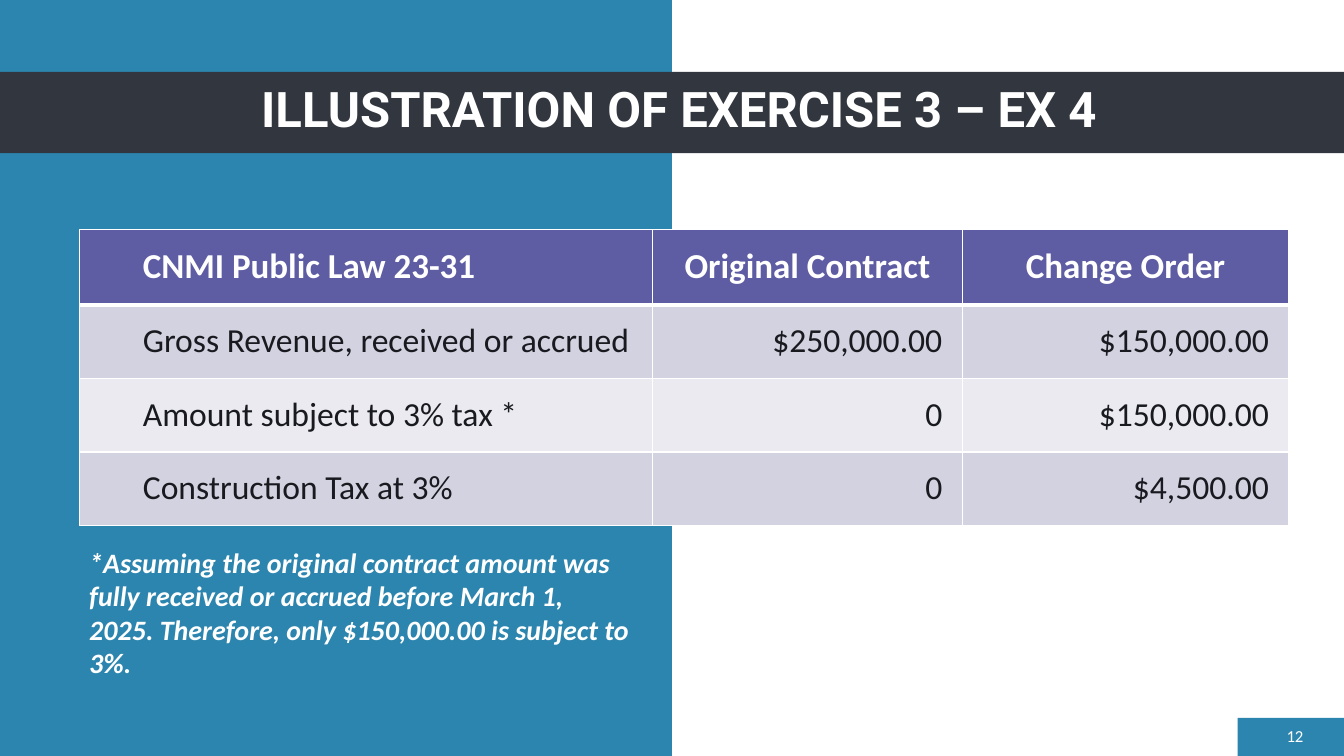
from dataclasses import dataclass

from lxml import etree
from pptx import Presentation
from pptx.dml.color import RGBColor
from pptx.enum.shapes import MSO_SHAPE
from pptx.enum.text import MSO_ANCHOR, PP_ALIGN
from pptx.oxml.ns import qn
from pptx.util import Cm, Pt

RECT = MSO_SHAPE.RECTANGLE
MID, TOP = MSO_ANCHOR.MIDDLE, MSO_ANCHOR.TOP
LEFT, MIDST, RIGHT = PP_ALIGN.LEFT, PP_ALIGN.CENTER, PP_ALIGN.RIGHT
WIDE, HIGH = 33.87, 19.05


@dataclass(frozen=True)
class Theme:
    """Colours, fonts and type sizes of the slide."""
    blue: str = "2C85AE"
    dark: str = "32363F"
    white: str = "FFFFFF"
    ink: str = "181A1F"
    violet: str = "5E5CA2"
    odd: str = "D2D2E0"
    even: str = "EAEAF0"
    head: str = "Roboto"
    body: str = "Calibri"
    title: int = 35
    label: int = 25
    cell: int = 24
    note: int = 20
    page: int = 12


LOOK = Theme()
ROWS = [
    ("CNMI Public Law 23-31", "Original Contract", "Change Order"),
    ("Gross Revenue, received or accrued", "$250,000.00", "$150,000.00"),
    ("Amount subject to 3% tax *", "0", "$150,000.00"),
    ("Construction Tax at 3%", "0", "$4,500.00"),
]
NOTE = ("*Assuming the original contract amount was fully received or accrued "
        "before March 1, 2025. Therefore, only $150,000.00 is subject to 3%.")


def place(box):
    """Turn a box in centimetres into lengths."""
    return [Cm(side) for side in box]


def write(frame, text, size, color=LOOK.white, face=LOOK.body, align=LEFT,
          bold=False, slant=False):
    """Put one run in the first paragraph and return the paragraph."""
    para = frame.paragraphs[0]
    para.alignment = align
    run = para.add_run()
    run.text = text
    font = run.font
    font.name, font.size, font.bold, font.italic = face, Pt(size), bold, slant
    font.color.rgb = RGBColor.from_string(color)
    return para


def add_block(slide, box, color):
    """Draw a plain filled rectangle."""
    block = slide.shapes.add_shape(RECT, *place(box))
    block.shadow.inherit = False
    block.fill.solid()
    block.fill.fore_color.rgb = RGBColor.from_string(color)
    block.line.fill.background()


def add_text(slide, box, text, size, anchor=TOP, **style):
    """Add a wrapped text box."""
    frame = slide.shapes.add_textbox(*place(box)).text_frame
    frame.word_wrap = True
    frame.vertical_anchor = anchor
    write(frame, text, size, **style)


def add_title(slide, box):
    """Draw the dark band and set the title over it."""
    left, top, width, height = box
    add_block(slide, box, LOOK.dark)
    title = slide.shapes.title
    slide.shapes.element.append(title.element)
    inner = (left + 1.55, top - 0.03, width - 2.73, height)
    title.left, title.top, title.width, title.height = place(inner)
    frame = title.text_frame
    frame.word_wrap = True
    frame.vertical_anchor = MID
    para = write(frame, "ILLUSTRATION OF EXERCISE 3 – EX 4", LOOK.title,
                 face=LOOK.head, align=MIDST, bold=True)
    para.line_spacing = 0.9


def edge(cell, widths):
    """Give a cell white borders, listed left, right, top, bottom."""
    props = cell._tc.get_or_add_tcPr()
    for spot, (side, width) in enumerate(zip("LRTB", widths)):
        line = etree.Element(qn(f"a:ln{side}"), w=str(Pt(width)))
        fill = etree.SubElement(line, qn("a:solidFill"))
        etree.SubElement(fill, qn("a:srgbClr"), val=LOOK.white)
        props.insert(spot, line)


def fill_cell(cell, text, row, col):
    """Style and fill one table cell by its row and column."""
    first = row == 0
    tint = LOOK.violet if first else (LOOK.even, LOOK.odd)[row % 2]
    cell.fill.solid()
    cell.fill.fore_color.rgb = RGBColor.from_string(tint)
    cell.vertical_anchor = MID
    cell.margin_left = Cm(0.5 if col else 1.6)
    cell.margin_top = cell.margin_right = Cm(0.5)
    cell.margin_bottom = Cm(0.25)
    para = write(cell.text_frame, text, LOOK.label if first else LOOK.cell,
                 color=LOOK.white if first else LOOK.ink, bold=first,
                 align=LEFT if col == 0 else MIDST if first else RIGHT)
    para.line_spacing = Pt(21.8)
    edge(cell, (1, 1, 3 if row == 1 else 1, 3 if first else 1))


def add_tax(slide, box):
    """Build the tax table."""
    frame = slide.shapes.add_table(len(ROWS), len(ROWS[0]), *place(box))
    table = frame.table
    for col, part in zip(table.columns, (0.474, 0.256, 0.27)):
        col.width = Cm(box[2] * part)
    for row, part in zip(table.rows, (0.255, 0.248, 0.249, 0.248)):
        row.height = Cm(box[3] * part)
    for row, texts in enumerate(ROWS):
        for col, text in enumerate(texts):
            fill_cell(table.cell(row, col), text, row, col)


def add_page(slide, box):
    """Draw the page tab with its number."""
    left, top, width, height = box
    add_block(slide, box, LOOK.blue)
    add_text(slide, (left - 5.7, top - 0.05, width + 4.93, height + 0.05),
             "12", LOOK.page, MID, align=RIGHT)


def main():
    """Build and save the slide."""
    deck = Presentation()
    deck.slide_width, deck.slide_height = Cm(WIDE), Cm(HIGH)
    slide = deck.slides.add_slide(deck.slide_layouts[5])
    add_block(slide, (0, 0, WIDE / 2, HIGH), LOOK.blue)
    add_title(slide, (0, 1.81, WIDE, 2.05))
    add_page(slide, (31.19, 18.09, WIDE - 31.19, HIGH - 18.09))
    add_tax(slide, (2, 5.79, 30.48, 7.45))
    add_text(slide, (2, 13.61, 14.2, 2.82), NOTE, LOOK.note,
             bold=True, slant=True)
    deck.save("out.pptx")


if __name__ == "__main__":
    main()
